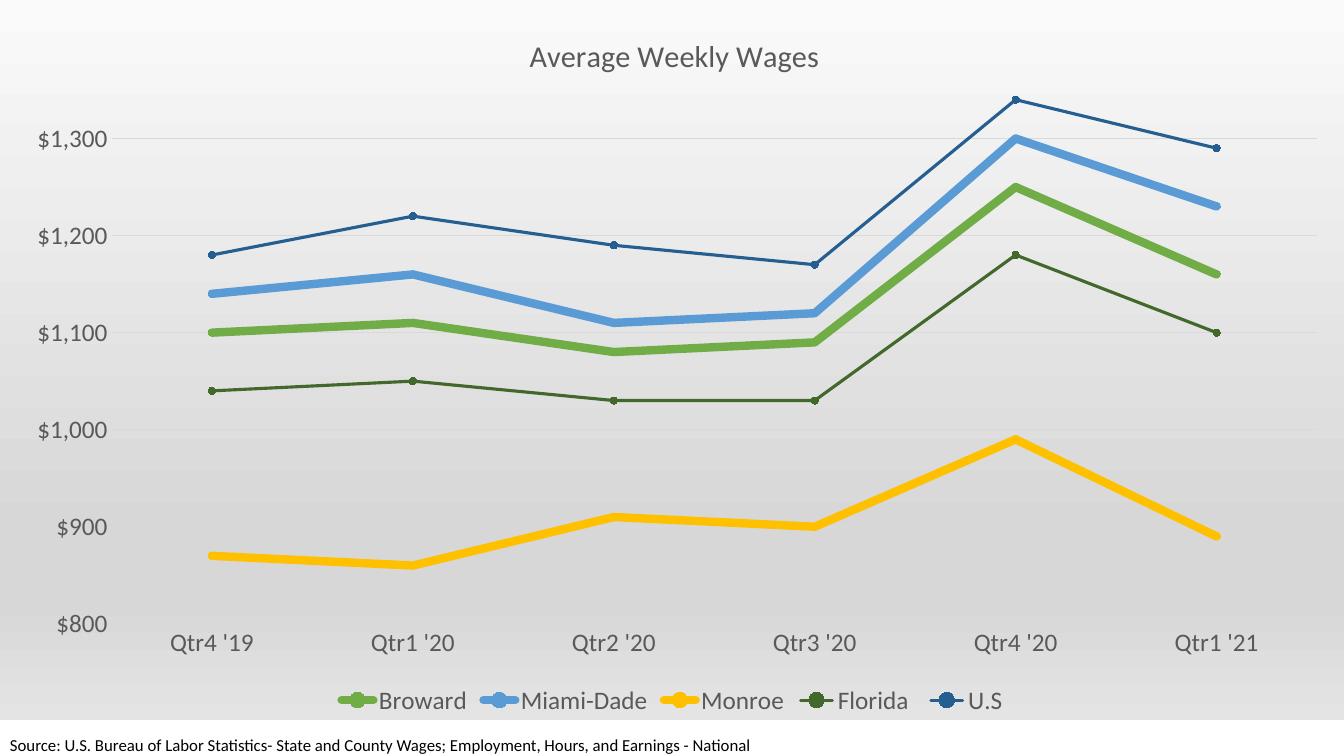
import pptx
import pptx.chart.data
import pptx.dml.color
import pptx.enum.chart
import pptx.enum.dml
import pptx.enum.shapes
import pptx.enum.text
import pptx.oxml
import pptx.oxml.ns
import pptx.util

RGBColor = pptx.dml.color.RGBColor
GREEN = RGBColor(0x70, 0xAD, 0x47)
BLUE = RGBColor(0x5B, 0x9B, 0xD5)
GOLD = RGBColor(0xFF, 0xC0, 0x00)
DARK_GREEN = RGBColor(0x43, 0x68, 0x2B)
DARK_BLUE = RGBColor(0x25, 0x5E, 0x91)
GREY = RGBColor(0x59, 0x59, 0x59)
PALE_GREY = RGBColor(0xD9, 0xD9, 0xD9)
WHITE = RGBColor(0xFF, 0xFF, 0xFF)
BLACK = RGBColor(0x00, 0x00, 0x00)

THICK, THIN = 6, 2.25
QUARTERS = ["Qtr4 '19", "Qtr1 '20", "Qtr2 '20", "Qtr3 '20", "Qtr4 '20", "Qtr1 '21"]
REGIONS = [
    ("Broward", GREEN, THICK, (1100, 1110, 1080, 1090, 1250, 1160)),
    ("Miami-Dade", BLUE, THICK, (1140, 1160, 1110, 1120, 1300, 1230)),
    ("Monroe", GOLD, THICK, (870, 860, 910, 900, 990, 890)),
    ("Florida ", DARK_GREEN, THIN, (1040, 1050, 1030, 1030, 1180, 1100)),
    ("U.S", DARK_BLUE, THIN, (1180, 1220, 1190, 1170, 1340, 1290)),
]
BACKDROP = [(0, "FAFAFA"), (74, "D7D7D7"), (83, "D7D7D7"), (100, "E4E4E4")]
NAMESPACES = pptx.oxml.ns.nsdecls("c", "a")


def style_font(font, size, color):
    for name, value in {"name": "Calibri", "size": pptx.util.Pt(size), "bold": False}.items():
        setattr(font, name, value)
    font.color.rgb = color


def place(owner, position, target, **shares):
    for old in owner.xpath("c:layout"):
        owner.remove(old)
    inner = f'<c:layoutTarget val="{target}"/>' if target else ""
    modes = "".join(f'<c:{side}Mode val="edge"/>' for side in "xy")
    sizes = "".join(f'<c:{side} val="{share}"/>' for side, share in shares.items())
    owner.insert(position, pptx.oxml.parse_xml(
        f"<c:layout {NAMESPACES}><c:manualLayout>{inner}{modes}{sizes}</c:manualLayout></c:layout>"))


deck = pptx.Presentation()
deck.slide_width = pptx.util.Inches(13.33)
deck.slide_height = pptx.util.Inches(7.5)
width, height = deck.slide_width, deck.slide_height
slide = deck.slides.add_slide(deck.slide_layouts[6])

source = slide.shapes.add_shape(
    pptx.enum.shapes.MSO_SHAPE.RECTANGLE,
    0, int(height * 0.939), int(width * 0.918), int(height * 0.066))
source.shadow.inherit = False
source.fill.solid()
source.fill.fore_color.rgb = WHITE
source.line.fill.background()
source_text = source.text_frame
source_text.word_wrap = True
source_text.vertical_anchor = pptx.enum.text.MSO_ANCHOR.BOTTOM
source_line = source_text.paragraphs[0]
source_line.alignment = pptx.enum.text.PP_ALIGN.LEFT
source_line.text = ("Source: U.S. Bureau of Labor Statistics- State and County Wages; "
                    "Employment, Hours, and Earnings - National")
style_font(source_line.runs[0].font, 12, BLACK)

wage_data = pptx.chart.data.CategoryChartData(number_format='"$"#,##0')
wage_data.categories = QUARTERS
for region, color, weight, wages in REGIONS:
    wage_data.add_series(region, wages)
wages_chart = slide.shapes.add_chart(
    pptx.enum.chart.XL_CHART_TYPE.LINE_MARKERS,
    0, 0, width, int(height * 0.953), wage_data).chart
style_font(wages_chart.font, 18, BLACK)

wages_chart.has_title = True
heading = wages_chart.chart_title.text_frame.paragraphs[0]
heading.text = "Average Weekly Wages"
style_font(heading.runs[0].font, 21.6, GREY)

wages_chart.has_legend = True
regions_key = wages_chart.legend
regions_key.position = pptx.enum.chart.XL_LEGEND_POSITION.BOTTOM
regions_key.include_in_layout = False
style_font(regions_key.font, 18, GREY)

quarter_axis, wage_axis = wages_chart.category_axis, wages_chart.value_axis
for axis in (quarter_axis, wage_axis):
    axis.major_tick_mark = pptx.enum.chart.XL_TICK_MARK.NONE
    axis.minor_tick_mark = pptx.enum.chart.XL_TICK_MARK.NONE
    style_font(axis.tick_labels.font, 18, GREY)
for name, value in {"minimum_scale": 800, "maximum_scale": 1350, "major_unit": 100,
                    "has_major_gridlines": True}.items():
    setattr(wage_axis, name, value)
wage_axis.tick_labels.number_format = '"$"#,##0'
wage_axis.tick_labels.number_format_is_linked = False
wage_axis.format.line.fill.background()
for rule in (quarter_axis.format.line, wage_axis.major_gridlines.format.line):
    rule.color.rgb = PALE_GREY
    rule.width = pptx.util.Pt(0.75)

wages_chart.plots[0].vary_by_categories = False
for trend, (region, color, weight, wages) in zip(wages_chart.plots[0].series, REGIONS):
    trend.smooth = False
    trend.format.line.color.rgb = color
    trend.format.line.width = pptx.util.Pt(weight)
    trend.marker.style = pptx.enum.chart.XL_MARKER_STYLE.CIRCLE
    trend.marker.size = 5
    trend.marker.format.fill.solid()
    trend.marker.format.fill.fore_color.rgb = color
    trend.marker.format.line.color.rgb = color

chart_root = wages_chart.element
for stroke in chart_root.xpath(".//c:ser/c:spPr/a:ln"):
    stroke.set("cap", "rnd")
    stroke.append(pptx.oxml.parse_xml(f"<a:round {NAMESPACES}/>"))
place(chart_root.xpath("c:chart/c:title")[0], 1, "", x=0.39, y=0.04)
place(chart_root.xpath("c:chart/c:plotArea")[0], 0, "inner", x=0.083, y=0.125, w=0.897, h=0.741)

stops = "".join(f'<a:gs pos="{share * 1000}"><a:srgbClr val="{tone}"/></a:gs>'
                for share, tone in BACKDROP)
chart_root.xpath("c:txPr")[0].addprevious(pptx.oxml.parse_xml(
    f"<c:spPr {NAMESPACES}><a:gradFill><a:gsLst>{stops}</a:gsLst>"
    '<a:lin ang="5400000" scaled="0"/></a:gradFill><a:ln><a:noFill/></a:ln></c:spPr>'))

deck.save("out.pptx")
